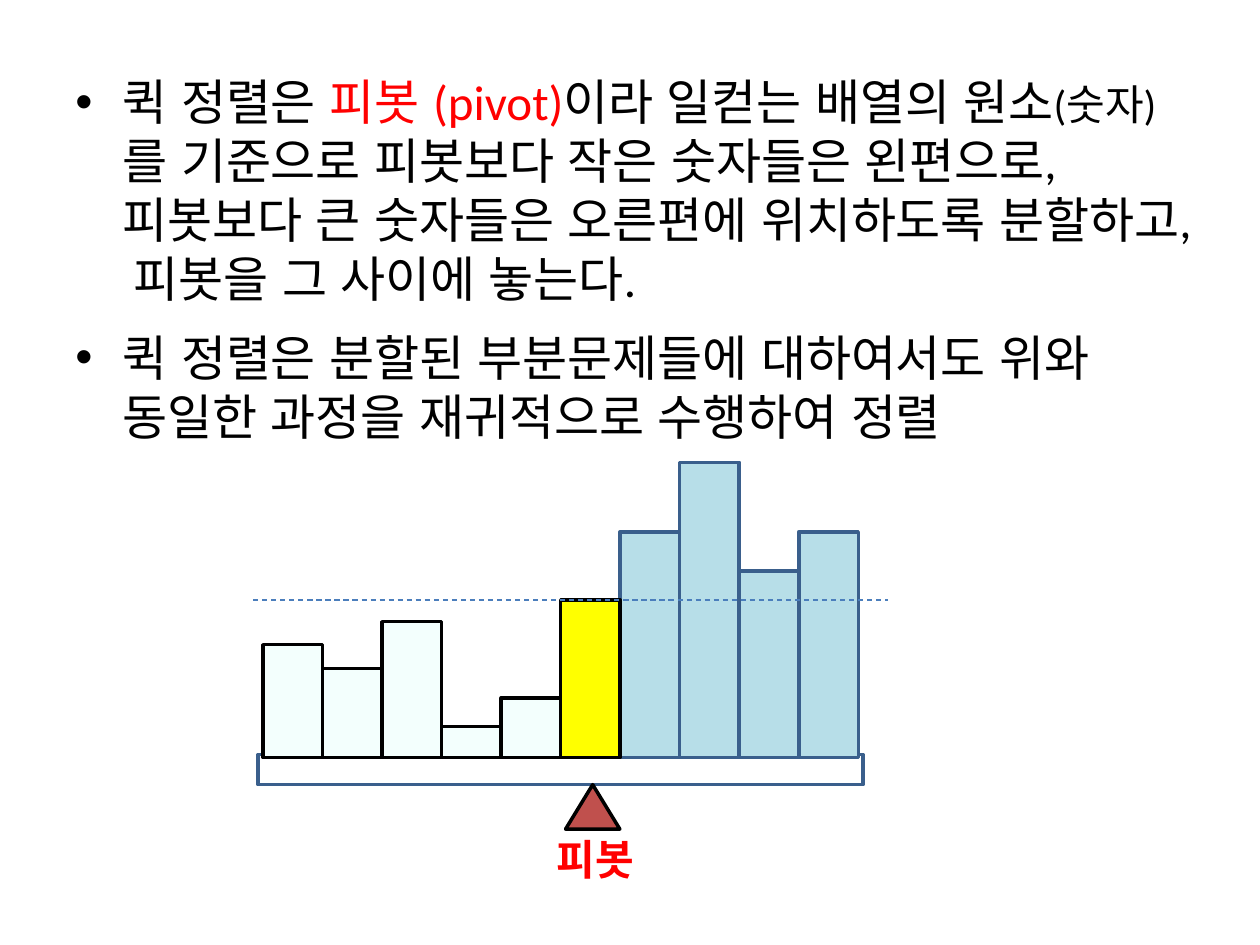
"""Build a slide explaining how quick sort partitions around a pivot."""
from lxml import etree
from pptx import Presentation
from pptx import util as u
from pptx.dml.color import RGBColor
from pptx.enum import dml, shapes, text
from pptx.oxml.ns import qn

COLORS = {"black": "000000", "red": "FF0000", "white": "FFFFFF",
          "small": "F3FFFD", "pivot": "FFFF00", "large": "B7DEE8",
          "navy": "3A5F8C", "brick": "C0504D", "blue": "4B7EBC"}
LATIN, EAST_ASIAN, KOREAN = "Calibri", "Arial", "Noto Sans CJK KR"

BULLETS = [
    [("퀵 정렬은 ", {}),
     ("피봇 (pivot)", {"color": "red"}),
     ("이라 일컫는 배열의 원소", {}),
     ("(숫자)", {"size": 24}),
     ("를 기준으로 피봇보다 작은 숫자들은 왼편으로, 피봇보다 큰 숫자들은 "
      "오른편에 위치하도록 분할하고, 피봇을 그 사이에 놓는다.", {})],
    [("퀵 정렬은 분할된 부분문제들에 대하여서도 위와 동일한 과정을 "
      "재귀적으로 수행하여 정렬", {})],
]
PIVOT_LABEL = "피봇"
BARS = [("small", 64.5), ("small", 51), ("small", 77.6), ("small", 17.8),
        ("small", 34), ("pivot", 90), ("large", 129), ("large", 168.7),
        ("large", 106.5), ("large", 129)]
BAR_LEFT, BAR_WIDTH, BASELINE = 150.3, 34.02, 432.9
PIVOT_HEIGHT = dict(BARS)["pivot"]


def rgb(name):
    return RGBColor.from_string(COLORS[name])


def add_text(paragraph, content, size=28, color="black", font=LATIN,
             east_asian=EAST_ASIAN, bold=False):
    run = paragraph.add_run()
    run.text = content
    run.font.size, run.font.bold, run.font.name = u.Pt(size), bold, font
    run.font.color.rgb = rgb(color)
    etree.SubElement(run.font._element, qn("a:ea")).set("typeface", east_asian)


def add_frame(slide, left, top, width, height):
    box = slide.shapes.add_textbox(*map(u.Pt, (left, top, width, height)))
    box.text_frame.word_wrap = True
    return box.text_frame


def add_bullet(paragraph, indent=27):
    paragraph.space_before, paragraph.space_after = u.Pt(5.6), u.Pt(6)
    properties = paragraph._p.get_or_add_pPr()
    properties.set("marL", str(u.Pt(indent)))
    properties.set("indent", str(-u.Pt(indent)))
    etree.SubElement(properties, qn("a:buFont")).set("typeface", "Arial")
    etree.SubElement(properties, qn("a:buChar")).set("char", "•")


def add_block(slide, kind, left, top, width, height, fill, line):
    shape = slide.shapes.add_shape(kind, *map(u.Pt, (left, top, width, height)))
    shape.shadow.inherit = False
    shape.fill.solid()
    shape.fill.fore_color.rgb = rgb(fill)
    shape.line.color.rgb = rgb(line)
    shape.line.width = u.Pt(2)


def add_dashed_line(slide, left, right, y):
    connector = slide.shapes.add_connector(
        shapes.MSO_CONNECTOR.STRAIGHT, *map(u.Pt, (left, y, right, y)))
    connector.line.color.rgb = rgb("blue")
    connector.line.width = u.Pt(0.75)
    connector.line.dash_style = dml.MSO_LINE.DASH
    etree.SubElement(connector._element.spPr, qn("a:effectLst"))


def main():
    presentation = Presentation()
    presentation.slide_width, presentation.slide_height = u.Pt(720), u.Pt(540)
    slide = presentation.slides.add_slide(presentation.slide_layouts[6])

    body = add_frame(slide, 36, 37.5, 648, 227)
    for index, runs in enumerate(BULLETS):
        paragraph = body.add_paragraph() if index else body.paragraphs[0]
        add_bullet(paragraph)
        for content, style in runs:
            add_text(paragraph, content, **style)

    rectangle = shapes.MSO_SHAPE.RECTANGLE
    add_block(slide, rectangle, 147.5, 431.2, 345.7, 17.2, "white", "navy")
    add_block(slide, shapes.MSO_SHAPE.ISOSCELES_TRIANGLE,
              323.2, 448.4, 31, 25.4, "brick", "black")
    for index, (group, height) in reversed(list(enumerate(BARS))):
        add_block(slide, rectangle, BAR_LEFT + index * BAR_WIDTH,
                  BASELINE - height, BAR_WIDTH, height, group,
                  "navy" if group == "large" else "black")
    add_dashed_line(slide, 144.7, 507.6, BASELINE - PIVOT_HEIGHT)

    label = add_frame(slide, 269.3, 472.6, 141.8, 36)
    label.paragraphs[0].alignment = text.PP_ALIGN.CENTER
    add_text(label.paragraphs[0], PIVOT_LABEL, size=24, color="red",
             font=KOREAN, east_asian=KOREAN, bold=True)

    presentation.save("out.pptx")


if __name__ == "__main__":
    main()
